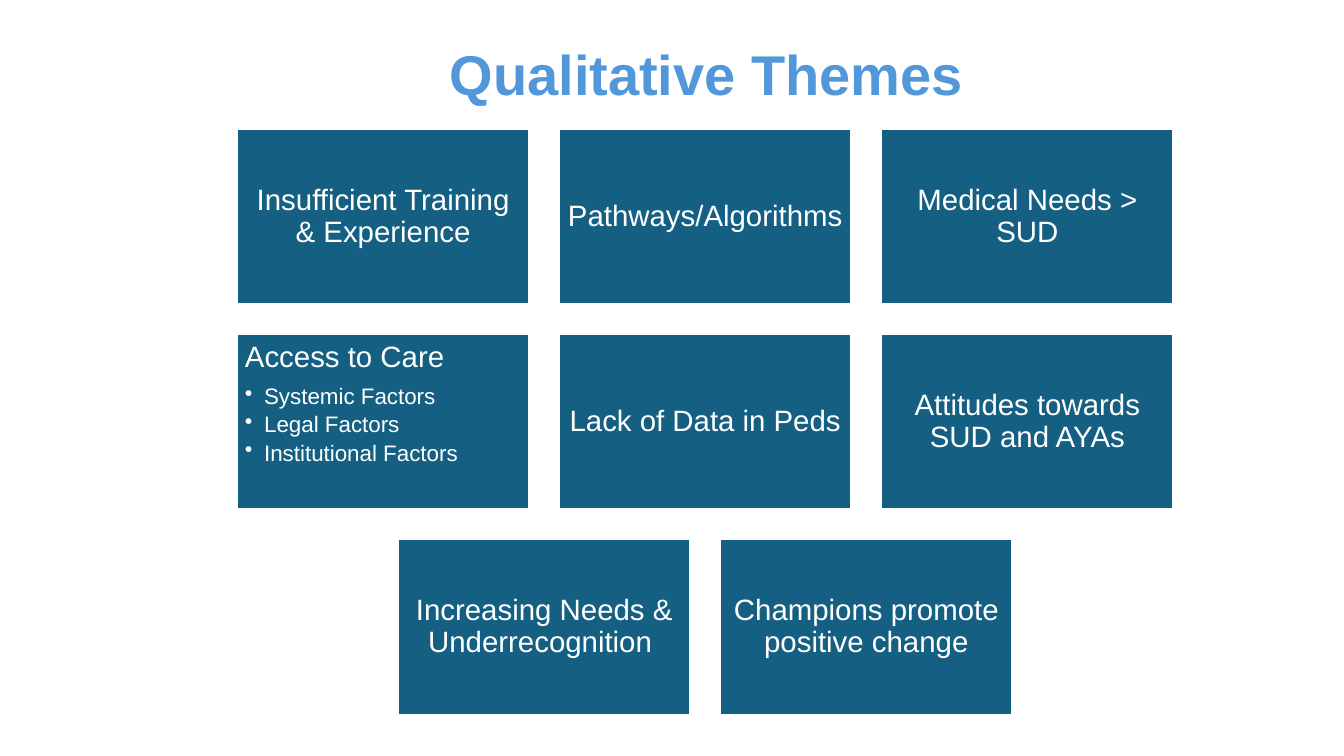
import pptx
import pptx.util
import pptx.dml.color
import pptx.enum.shapes
import pptx.enum.text
import pptx.oxml
import pptx.oxml.ns
from dataclasses import dataclass

PX = 9144  # EMU in one px, at 100 px to the inch
ALIGN = pptx.enum.text.PP_ALIGN
ANCHOR = pptx.enum.text.MSO_ANCHOR


@dataclass(frozen=True)
class Theme:
    font: str = "Arial"
    title: str = "5197DA"
    tile: str = "156082"
    text: str = "FFFFFF"
    edge: str = "FFFFFF"
    big: int = 40
    mid: int = 21
    small: int = 16


THEME = Theme()

# A tile is a heading followed by its bullets, if any.
ROWS = [
    [["Insufficient Training & Experience"],
     ["Pathways/Algorithms"],
     ["Medical Needs > SUD"]],
    [["Access to Care", "Systemic Factors", "Legal Factors", "Institutional Factors"],
     ["Lack of Data in Peds"],
     ["Attitudes towards SUD and AYAs"]],
    [["Increasing Needs & Underrecognition "],
     ["Champions promote positive change"]],
]


def px(num):
    return pptx.util.Emu(round(num * PX))


def rgb(code):
    return pptx.dml.color.RGBColor.from_string(code)


def write(par, text, size, color, bold=False, align=ALIGN.LEFT, after=0):
    par.alignment = align
    par.line_spacing = 0.9
    par.space_after = pptx.util.Pt(after)
    run = par.add_run()
    run.text = text
    font = run.font
    font.name, font.size, font.bold = THEME.font, pptx.util.Pt(size), bold
    font.color.rgb = rgb(color)


def add_dot(par, dent):
    """Give the paragraph a round bullet with a hanging indent in px."""
    props = par._p.get_or_add_pPr()
    props.set("marL", str(px(dent)))
    props.set("indent", str(px(-dent)))
    dot = pptx.oxml.parse_xml(
        f'<a:buChar {pptx.oxml.ns.nsdecls("a")} char="•"/>')
    props.append(dot)


def add_title(slide, box, text):
    frame = slide.shapes.add_textbox(*map(px, box)).text_frame
    frame.word_wrap = True
    frame.vertical_anchor = ANCHOR.MIDDLE
    write(frame.paragraphs[0], text, THEME.big, THEME.title,
          bold=True, align=ALIGN.CENTER)


def add_tile(slide, box, head, *items):
    tile = slide.shapes.add_shape(
        pptx.enum.shapes.MSO_SHAPE.RECTANGLE, *map(px, box))
    tile.shadow.inherit = False
    tile.fill.solid()
    tile.fill.fore_color.rgb = rgb(THEME.tile)
    tile.line.color.rgb = rgb(THEME.edge)
    tile.line.width = pptx.util.Pt(1.5)

    frame = tile.text_frame
    frame.word_wrap = True
    frame.margin_left = frame.margin_right = px(8)
    frame.margin_top = frame.margin_bottom = px(8)
    frame.vertical_anchor = ANCHOR.TOP if items else ANCHOR.MIDDLE
    write(frame.paragraphs[0], head, THEME.mid, THEME.text,
          align=ALIGN.LEFT if items else ALIGN.CENTER,
          after=8 if items else 0)
    for item in items:
        par = frame.add_paragraph()
        write(par, item, THEME.small, THEME.text, after=3)
        add_dot(par, 19)


def add_grid(slide, box, rows, wide=290, high=174):
    """Spread the rows over the box; a short row is centred."""
    left, top, width, height = box
    cols = max(map(len, rows))
    gap_x = (width - cols * wide) / (cols - 1)
    gap_y = (height - len(rows) * high) / (len(rows) - 1)
    for i, row in enumerate(rows):
        start = left + (cols - len(row)) * (wide + gap_x) / 2
        for j, tile in enumerate(row):
            place = (start + j * (wide + gap_x), top + i * (high + gap_y), wide, high)
            add_tile(slide, place, *tile)


def main():
    deck = pptx.Presentation()
    deck.slide_width, deck.slide_height = px(1333), px(750)
    slide = deck.slides.add_slide(deck.slide_layouts[6])
    add_grid(slide, (235, 128, 929, 581), ROWS)
    add_title(slide, (143, 26, 1115, 102), "Qualitative Themes")
    deck.save("out.pptx")


if __name__ == "__main__":
    main()
